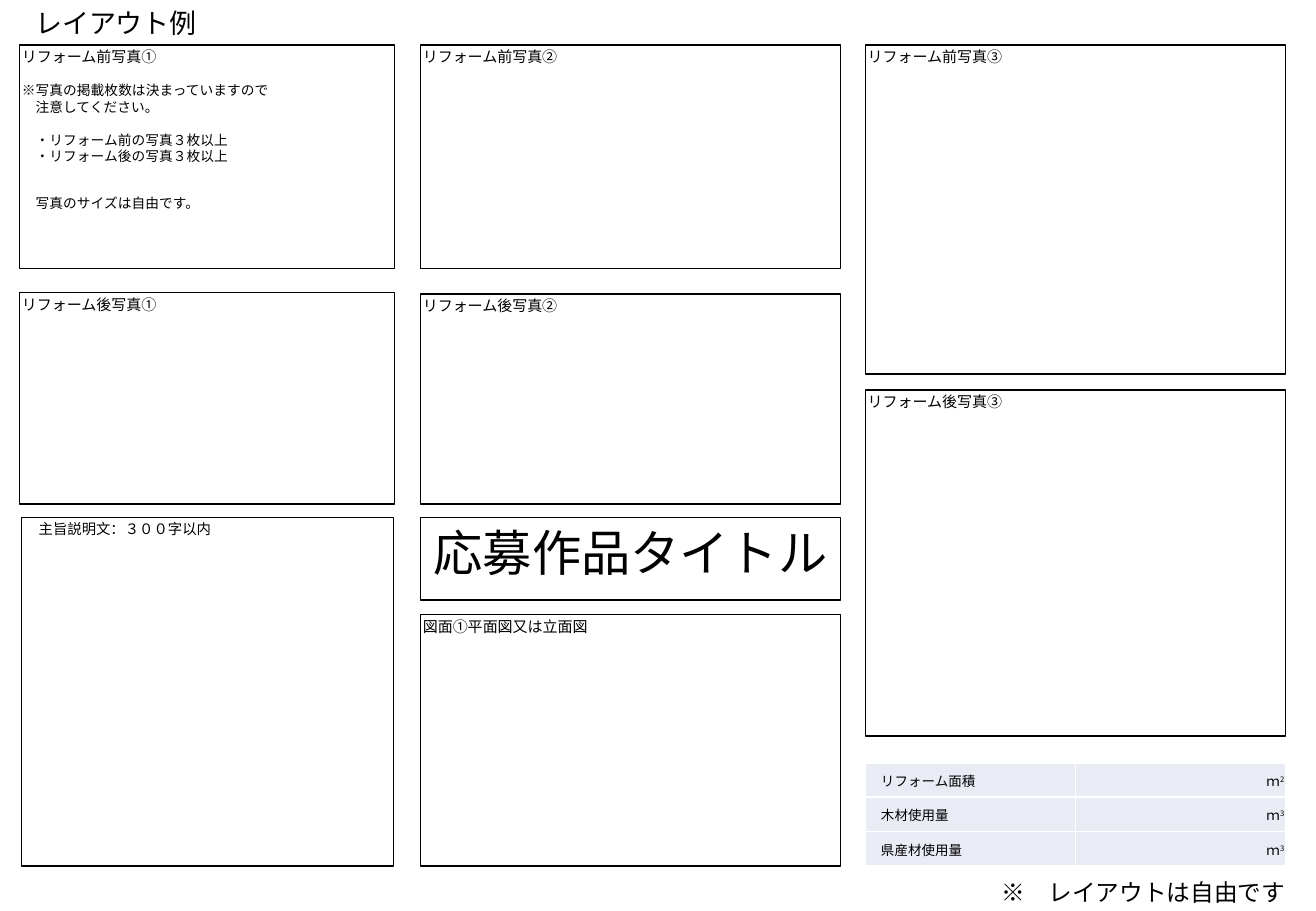
import pptx
import pptx.util
import pptx.dml.color
import pptx.enum.shapes
import pptx.enum.text
import pptx.oxml
import pptx.oxml.ns
import lxml.etree

Inches, Pt = pptx.util.Inches, pptx.util.Pt
RGB = pptx.dml.color.RGBColor.from_string
ALIGN, ANCHOR = pptx.enum.text.PP_ALIGN, pptx.enum.text.MSO_ANCHOR
COLOURS = {"ink": "000000", "paper": "FFFFFF", "cell": "E9EBF5"}
FONT = "Noto Sans CJK JP"


def add_span(para, text, size, latin=FONT):
    """Add one run, with the same Japanese font whatever the Latin one is."""
    span = para.add_run()
    span.text = text
    span.font.size = Pt(size)
    span.font.name = latin
    span.font.color.rgb = RGB(COLOURS["ink"])
    east_asian = lxml.etree.SubElement(span._r.get_or_add_rPr(), pptx.oxml.ns.qn("a:ea"))
    east_asian.set("typeface", FONT)
    return span


def set_margins(item, left, top, right, bottom):
    item.margin_left, item.margin_top = Inches(left), Inches(top)
    item.margin_right, item.margin_bottom = Inches(right), Inches(bottom)


deck = pptx.Presentation()
deck.slide_width, deck.slide_height = Inches(10.83), Inches(7.5)
page = deck.slides.add_slide(deck.slide_layouts[5])

# Heading
heading = page.shapes.title
heading.left, heading.top, heading.width, heading.height = map(Inches, (0.19, 0, 2.72, 0.37))
frame = heading.text_frame
frame.auto_size = pptx.enum.text.MSO_AUTO_SIZE.NONE
frame.vertical_anchor = ANCHOR.TOP
set_margins(frame, 0.1, 0.05, 0.1, 0.05)
frame.paragraphs[0].alignment = ALIGN.LEFT
add_span(frame.paragraphs[0], "レイアウト例", 16)

# Framed areas in three columns: label, column, top, height
COLUMNS = [(0.16, 3.09), (3.46, 3.46), (7.12, 3.46)]
AREAS = [
    ("リフォーム前写真①", 0, 0.37, 1.84),
    ("リフォーム前写真②", 1, 0.37, 1.84),
    ("リフォーム前写真③", 2, 0.37, 2.71),
    ("リフォーム後写真①", 0, 2.41, 1.74),
    ("リフォーム後写真②", 1, 2.42, 1.73),
    ("リフォーム後写真③", 2, 3.21, 2.85),
    ("　主旨説明文：３００字以内", 0, 4.26, 2.87),
    ("応募作品タイトル", 1, 4.26, 0.68),
    ("図面①平面図又は立面図", 1, 5.06, 2.07),
]
frames = {}
for label, column, top, height in AREAS:
    left, width = COLUMNS[column]
    box = page.shapes.add_shape(pptx.enum.shapes.MSO_SHAPE.RECTANGLE,
                                Inches(left), Inches(top), Inches(width), Inches(height))
    box.shadow.inherit = False
    box.fill.solid()
    box.fill.fore_color.rgb = RGB(COLOURS["paper"])
    box.line.color.rgb = RGB(COLOURS["ink"])
    box.line.width = Pt(0.75)
    frame = frames[label] = box.text_frame
    frame.word_wrap = True
    frame.vertical_anchor = ANCHOR.TOP
    para = frame.paragraphs[0]
    if label == "応募作品タイトル":
        set_margins(frame, 0.06, 0.04, 0.06, 0)
        para.alignment = ALIGN.CENTER
        add_span(para, label, 29.2)
    else:
        set_margins(frame, 0.02, 0.02, 0, 0)
        para.alignment = ALIGN.LEFT
        if label.endswith("３００字以内"):
            box.left, box.width = Inches(0.18), Inches(3.06)
            para.line_spacing = Pt(10.6)
            add_span(para, label, 8.5)
        else:
            add_span(para, label, 8.9)

# Photo rules inside the first area: text, space before
PHOTO_RULES = [
    ("※写真の掲載枚数は決まっていますので", 9.8),
    ("　注意してください。", 0),
    ("　・リフォーム前の写真３枚以上", 9.8),
    ("　・リフォーム後の写真３枚以上", 0),
    ("　写真のサイズは自由です。", 18),
]
for text, gap in PHOTO_RULES:
    para = frames["リフォーム前写真①"].add_paragraph()
    para.alignment = ALIGN.LEFT
    para.line_spacing = Pt(9.8)
    para.space_before = Pt(gap)
    add_span(para, text, 8.1)

# Table of quantities
QUANTITIES = [("リフォーム面積", "2"), ("木材使用量", "3"), ("県産材使用量", "3")]
left, width = COLUMNS[2]
table = page.shapes.add_table(len(QUANTITIES), 2, Inches(left), Inches(6.28),
                              Inches(width), Inches(0.85)).table
table.first_row = table.horz_banding = False
for row, (name, power) in enumerate(QUANTITIES):
    name_cell, unit_cell = table.cell(row, 0), table.cell(row, 1)
    set_margins(name_cell, 0.13, 0.01, 0.13, 0)
    set_margins(unit_cell, 0.01, 0.01, 0.01, 0)
    para = name_cell.text_frame.paragraphs[0]
    para.alignment = ALIGN.JUSTIFY
    add_span(para, name, 8, "Calibri")
    para = unit_cell.text_frame.paragraphs[0]
    para.alignment = ALIGN.RIGHT
    add_span(para, "　ｍ", 8)
    add_span(para, power, 8).font._element.set("baseline", "30000")
    for cell in (name_cell, unit_cell):
        cell.vertical_anchor = ANCHOR.MIDDLE
        for edge in ("lnL", "lnR", "lnT", "lnB"):
            cell._tc.get_or_add_tcPr().append(pptx.oxml.parse_xml(
                f'<a:{edge} {pptx.oxml.ns.nsdecls("a")} w="12700"><a:solidFill>'
                f'<a:srgbClr val="{COLOURS["paper"]}"/></a:solidFill></a:{edge}>'))
        cell.fill.solid()
        cell.fill.fore_color.rgb = RGB(COLOURS["cell"])

# Closing note
note = page.shapes.add_textbox(Inches(8.14), Inches(7.18), Inches(2.72), Inches(0.34))
note.text_frame.word_wrap = False
add_span(note.text_frame.paragraphs[0], "※　レイアウトは自由です", 14)

deck.save("out.pptx")
